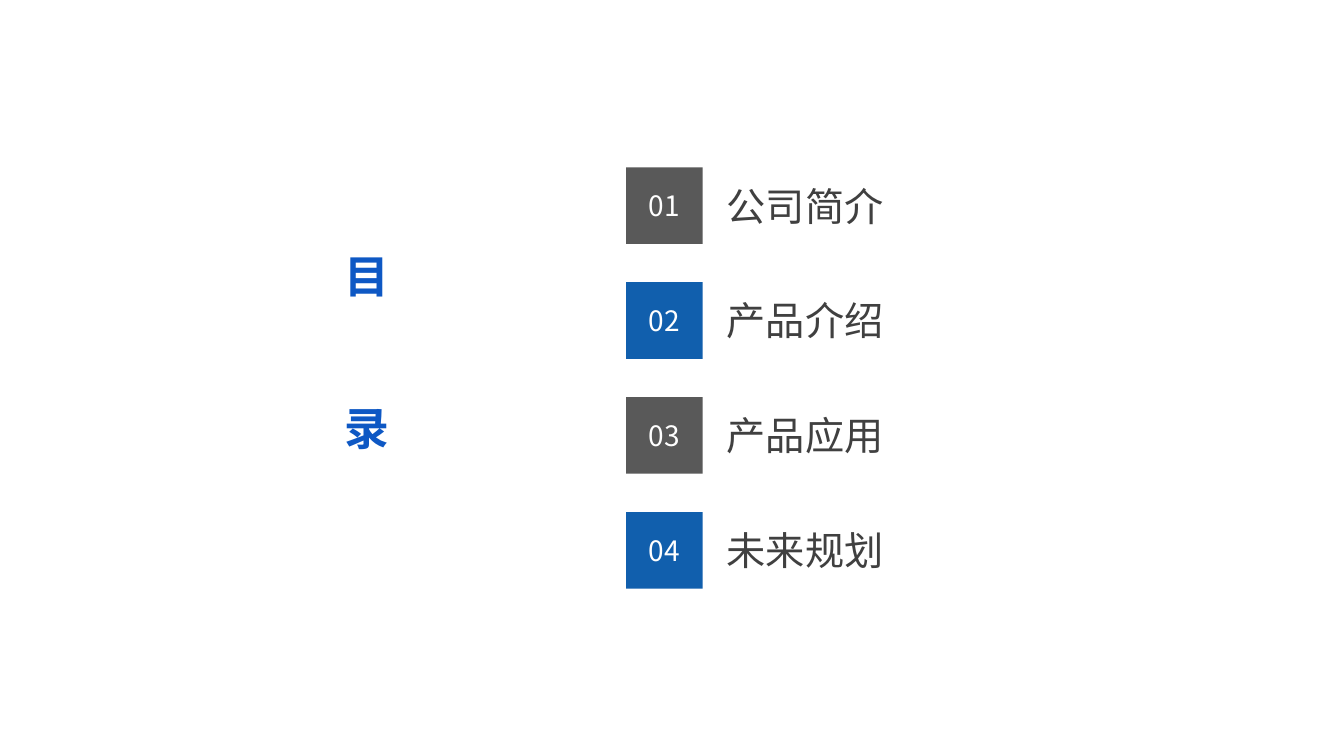
import pptx
import pptx.util
import pptx.dml.color
import pptx.enum.shapes
import pptx.enum.text
import pptx.oxml.ns
import lxml.etree

RGBColor = pptx.dml.color.RGBColor
GREY = RGBColor(0x59, 0x59, 0x59)
BLUE = RGBColor(0x11, 0x5F, 0xAD)
TITLE_BLUE = RGBColor(0x0E, 0x58, 0xC4)
INK = RGBColor(0x40, 0x40, 0x40)
WHITE = RGBColor(0xFF, 0xFF, 0xFF)

FONT = "Noto Sans CJK SC"
TOPICS = ["公司简介", "产品介绍", "产品应用", "未来规划"]
TOP, PITCH, TILE = 1.66, 1.14, 0.76
TILE_LEFT, LABEL_LEFT = 6.21, 7.11
LABEL_WIDTH, LABEL_HEIGHT = 2.9, 0.57


class Agenda:
    def __init__(self, prs):
        self.slide = prs.slides.add_slide(prs.slide_layouts[6])

    def row_top(self, row, height):
        return TOP + row * PITCH + (TILE - height) / 2

    def set_text(self, sp, lines, size, color, bold=False, gap=0):
        tf = sp.text_frame
        tf.text = "\n".join(lines)
        for i, p in enumerate(tf.paragraphs):
            if i:
                p.space_before = pptx.util.Pt(gap)
            for r in p.runs:
                r.font.name = FONT
                r.font.size = pptx.util.Pt(size)
                r.font.bold = bold
                r.font.color.rgb = color
                ea = lxml.etree.SubElement(
                    r._r.get_or_add_rPr(), pptx.oxml.ns.qn("a:ea"))
                ea.set("typeface", FONT)
        return tf

    def tile(self, row):
        sp = self.slide.shapes.add_shape(
            pptx.enum.shapes.MSO_SHAPE.RECTANGLE,
            *map(pptx.util.Inches, (TILE_LEFT, self.row_top(row, TILE), TILE, TILE)))
        sp.shadow.inherit = False
        sp.fill.solid()
        sp.fill.fore_color.rgb = (GREY, BLUE)[row % 2]
        sp.line.fill.background()
        tf = self.set_text(sp, [f"{row + 1:02d}"], 20, WHITE)
        tf.vertical_anchor = pptx.enum.text.MSO_ANCHOR.MIDDLE
        tf.paragraphs[0].alignment = pptx.enum.text.PP_ALIGN.CENTER

    def text(self, box, lines, size, color, wrap=True, **style):
        sp = self.slide.shapes.add_textbox(*map(pptx.util.Inches, box))
        tf = self.set_text(sp, lines, size, color, **style)
        tf.word_wrap = wrap
        tf.auto_size = pptx.enum.text.MSO_AUTO_SIZE.SHAPE_TO_FIT_TEXT

    def label(self, row, topic):
        box = (LABEL_LEFT, self.row_top(row, LABEL_HEIGHT), LABEL_WIDTH, LABEL_HEIGHT)
        self.text(box, [topic], 28, INK)


def main():
    prs = pptx.Presentation()
    prs.slide_width = pptx.util.Inches(13.33)
    prs.slide_height = pptx.util.Inches(7.5)
    agenda = Agenda(prs)
    for row, topic in enumerate(TOPICS):
        agenda.tile(row)
        agenda.label(row, topic)
    agenda.text((3.32, 2.42, 0.64, 2.25), ["目", "录"], 32, TITLE_BLUE,
                wrap=False, bold=True, gap=70)
    prs.save("out.pptx")


if __name__ == "__main__":
    main()
